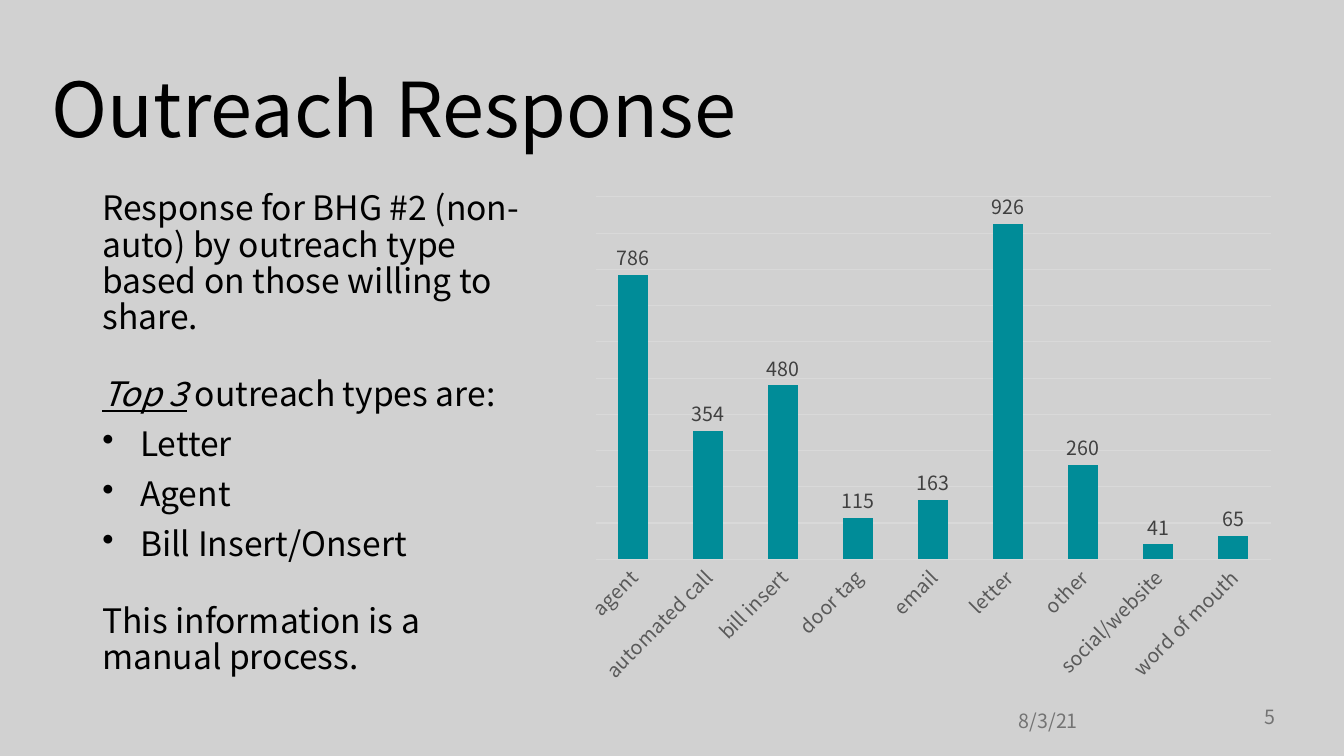
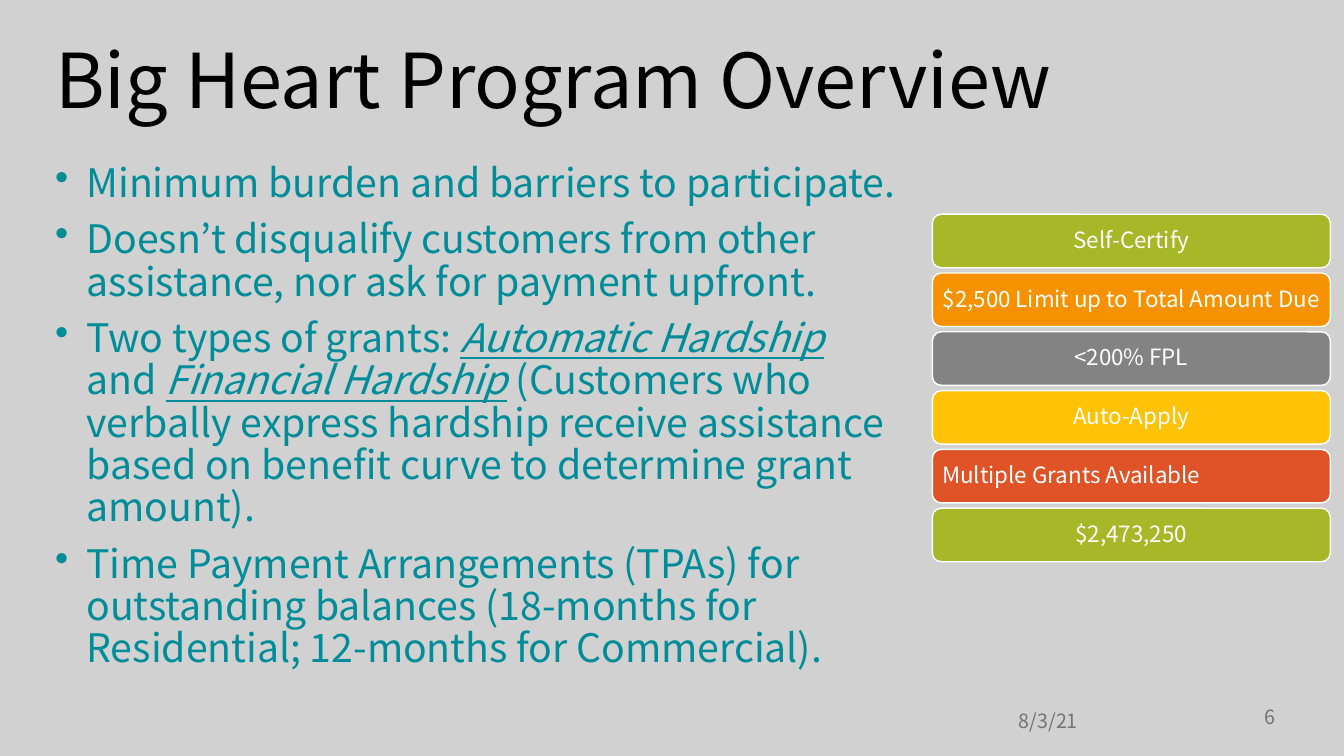
from lxml import etree
from pptx import Presentation
from pptx.chart.data import CategoryChartData
from pptx.dml.color import RGBColor
from pptx.enum.chart import XL_CHART_TYPE, XL_LABEL_POSITION, XL_TICK_LABEL_POSITION, XL_TICK_MARK
from pptx.enum.shapes import MSO_SHAPE
from pptx.enum.text import MSO_ANCHOR, PP_ALIGN
from pptx.oxml.ns import qn
from pptx.util import Pt

PX = 9525  # 96 px to the inch
FONT = "Noto Sans CJK JP"
BLACK = RGBColor(0x00, 0x00, 0x00)
WHITE = RGBColor(0xFF, 0xFF, 0xFF)
BACKGROUND = RGBColor(0xD1, 0xD1, 0xD1)
GRID = RGBColor(0xD9, 0xD9, 0xD9)
FOOTER_GRAY = RGBColor(0x73, 0x73, 0x73)
AXIS_GRAY = RGBColor(0x59, 0x59, 0x59)
LABEL_GRAY = RGBColor(0x40, 0x40, 0x40)
TEAL = RGBColor(0x00, 0x8C, 0x98)
GREEN = RGBColor(0xA6, 0xB7, 0x27)
ORANGE = RGBColor(0xF6, 0x92, 0x00)
GRAY = RGBColor(0x83, 0x83, 0x83)
YELLOW = RGBColor(0xFE, 0xC3, 0x06)
RED = RGBColor(0xDF, 0x53, 0x27)
LEFT, CENTER, RIGHT = PP_ALIGN.LEFT, PP_ALIGN.CENTER, PP_ALIGN.RIGHT
TOP, MIDDLE, BOTTOM = MSO_ANCHOR.TOP, MSO_ANCHOR.MIDDLE, MSO_ANCHOR.BOTTOM

TITLE = {"size": Pt(54), "color": BLACK}
BODY = {"size": Pt(24), "color": BLACK}
OVERVIEW = {"size": Pt(28), "color": TEAL}
PILL = {"size": Pt(16), "color": WHITE}
FOOTER = {"size": Pt(14), "color": FOOTER_GRAY}


def write_text(frame, paragraphs, style, align=LEFT, anchor=TOP, spacing=0.9):
    """Fill a frame with (text, bullet indent, space before); _words_ are italic and underlined."""
    frame.word_wrap = True
    frame.vertical_anchor = anchor
    for index, (text, indent, space_before) in enumerate(paragraphs):
        paragraph = frame.add_paragraph() if index else frame.paragraphs[0]
        if indent:
            properties = paragraph._p.get_or_add_pPr()
            properties.set("marL", str(indent * PX))
            properties.set("indent", str(-indent * PX))
            etree.SubElement(properties, qn("a:buChar")).set("char", "•")
        paragraph.alignment = align
        paragraph.line_spacing = spacing
        paragraph.space_before = Pt(space_before if index else 0)
        for part_index, part in enumerate(text.split("_")):
            if not part:
                continue
            run = paragraph.add_run()
            run.text = part
            run.font.name = FONT
            run.font.size = style["size"]
            run.font.color.rgb = style["color"]
            if part_index % 2:
                run.font.italic = True
                run.font.underline = True


def add_text_box(slide, box, paragraphs, style, **options):
    text_box = slide.shapes.add_textbox(*(length * PX for length in box))
    write_text(text_box.text_frame, paragraphs, style, **options)


presentation = Presentation()
presentation.slide_width = 1280 * PX
presentation.slide_height = 720 * PX
master_fill = presentation.slide_master.background.fill
master_fill.solid()
master_fill.fore_color.rgb = BACKGROUND

# Titles and footers
slides = []
for title, title_box, title_anchor, number in (
    ("Outreach Response", (40, 38, 1152, 139), MIDDLE, "5"),
    ("Big Heart Program Overview", (43, 13, 1181, 111), BOTTOM, "6"),
):
    slide = presentation.slides.add_slide(presentation.slide_layouts[6])
    slides.append(slide)
    add_text_box(slide, title_box, [(title, 0, 0)], TITLE, anchor=title_anchor)
    add_text_box(slide, (876, 667, 245, 38), [("8/3/21", 0, 0)], FOOTER,
                 align=CENTER, anchor=MIDDLE, spacing=1.0)
    add_text_box(slide, (1133, 667, 91, 38), [(number, 0, 0)], FOOTER, align=RIGHT, spacing=1.0)
response_slide, overview_slide = slides

# Outreach response
add_text_box(response_slide, (88, 178, 439, 458), [
    ("Response for BHG #2 (non-auto) by outreach type based on those willing to share.", 0, 0),
    ("_Top 3_ outreach types are:", 0, 28.6),
    ("Letter", 36, 10),
    ("Agent", 36, 10),
    ("Bill Insert/Onsert", 36, 10),
    ("This information is a manual process.", 0, 28.6),
], BODY)

responses = {
    "agent": 786, "automated call": 354, "bill insert": 480, "door tag": 115, "email": 163,
    "letter": 926, "other": 260, "social/website": 41, "word of mouth": 65,
}
chart_data = CategoryChartData(number_format="#,##0")
chart_data.categories = list(responses)
chart_data.add_series("Series 1", list(responses.values()))
chart = response_slide.shapes.add_chart(
    XL_CHART_TYPE.COLUMN_CLUSTERED, 544 * PX, 178 * PX, 680 * PX, 482 * PX, chart_data).chart
chart.has_title = False
chart.has_legend = False

plot = chart.plots[0]
plot.gap_width = 150
plot.vary_by_categories = False
plot.has_data_labels = True
labels = plot.data_labels
labels.show_value = True
labels.position = XL_LABEL_POSITION.OUTSIDE_END
labels.number_format = "#,##0"
labels.number_format_is_linked = False
column_fill = plot.series[0].format.fill
column_fill.solid()
column_fill.fore_color.rgb = TEAL

category_axis, value_axis = chart.category_axis, chart.value_axis
for axis in (category_axis, value_axis):
    axis.major_tick_mark = XL_TICK_MARK.NONE
    axis.minor_tick_mark = XL_TICK_MARK.NONE
value_axis.minimum_scale = 0
value_axis.maximum_scale = 1000
value_axis.major_unit = 100
value_axis.tick_label_position = XL_TICK_LABEL_POSITION.NONE
value_axis.format.line.fill.background()
for line in (category_axis.format.line, value_axis.major_gridlines.format.line):
    line.color.rgb = GRID
    line.width = Pt(0.75)

for font, color in (
    (chart.font, BLACK),
    (category_axis.tick_labels.font, AXIS_GRAY),
    (value_axis.tick_labels.font, AXIS_GRAY),
    (labels.font, LABEL_GRAY),
):
    font.name = FONT
    font.size = Pt(14)
    font.color.rgb = color
category_axis._element.find(qn("c:txPr")).find(qn("a:bodyPr")).set("rot", "-2700000")

# Program overview
add_text_box(overview_slide, (43, 151, 825, 463), [(text, 30, 10) for text in (
    "Minimum burden and barriers to participate.",
    "Doesn’t disqualify customers from other assistance, nor ask for payment upfront.",
    "Two types of grants: _Automatic Hardship_ and _Financial Hardship_ (Customers who verbally "
    "express hardship receive assistance based on benefit curve to determine grant amount).",
    "Time Payment Arrangements (TPAs) for outstanding balances (18-months for Residential; "
    "12-months for Commercial).",
)], OVERVIEW)

for row, (text, color, align) in enumerate((
    ("Self-Certify", GREEN, CENTER),
    ("$2,500 Limit up to Total Amount Due", ORANGE, CENTER),
    ("<200% FPL", GRAY, CENTER),
    ("Auto-Apply", YELLOW, CENTER),
    ("Multiple Grants Available", RED, LEFT),
    ("$2,473,250", GREEN, CENTER),
)):
    pill = overview_slide.shapes.add_shape(
        MSO_SHAPE.ROUNDED_RECTANGLE, 888 * PX, (204 + 56 * row) * PX, 379 * PX, 51 * PX)
    pill.shadow.inherit = False
    pill.fill.solid()
    pill.fill.fore_color.rgb = color
    pill.line.color.rgb = WHITE
    pill.line.width = Pt(1)
    pill.text_frame.margin_left = pill.text_frame.margin_right = 7 * PX
    write_text(pill.text_frame, [(text, 0, 0)], PILL, align=align, anchor=MIDDLE)

presentation.save("out.pptx")
